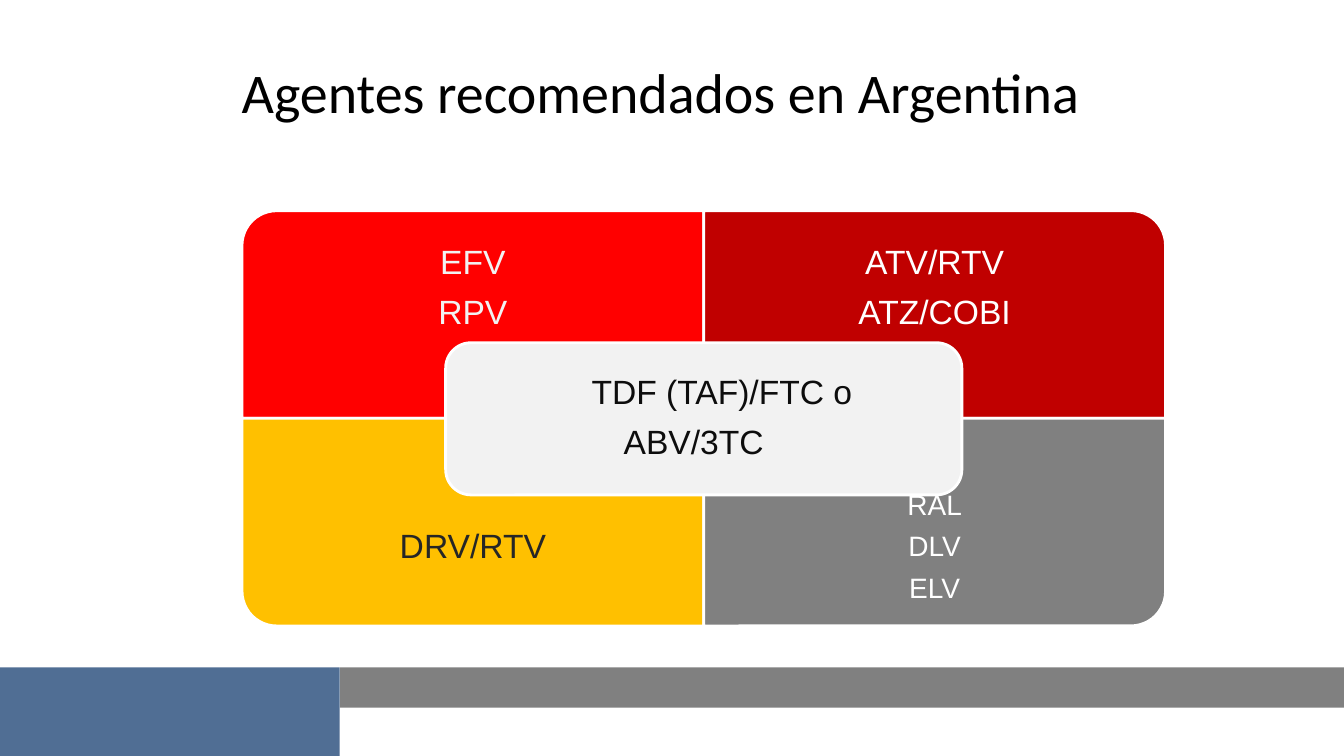
from pptx import Presentation
from pptx.dml.color import RGBColor
from pptx.enum.shapes import MSO_SHAPE
from pptx.enum.text import MSO_ANCHOR, PP_ALIGN
from pptx.util import Inches, Pt

RECTANGLE = MSO_SHAPE.RECTANGLE
ONE_ROUND_CORNER = MSO_SHAPE.ROUND_1_RECTANGLE
ROUNDED = MSO_SHAPE.ROUNDED_RECTANGLE
MIDDLE = MSO_ANCHOR.MIDDLE
CENTER = PP_ALIGN.CENTER

presentation = Presentation()
presentation.slide_width = Inches(13.33)
presentation.slide_height = Inches(7.5)
slide = presentation.slides.add_slide(presentation.slide_layouts[5])


def add_panel(kind, left, top, width, height, fill, outlined=True):
    shape = slide.shapes.add_shape(
        kind, Inches(left), Inches(top), Inches(width), Inches(height))
    shape.shadow.inherit = False
    shape.fill.solid()
    shape.fill.fore_color.rgb = RGBColor.from_string(fill)
    if outlined:
        shape.line.color.rgb = RGBColor.from_string("FFFFFF")
        shape.line.width = Pt(2)
    else:
        shape.line.fill.background()
    return shape


def add_label(left, top, width, height, inset, lines, size, color):
    box = slide.shapes.add_textbox(
        Inches(left), Inches(top), Inches(width), Inches(height))
    frame = box.text_frame
    frame.word_wrap = True
    frame.vertical_anchor = MIDDLE
    frame.margin_left = frame.margin_right = Inches(inset)
    frame.margin_top = frame.margin_bottom = Inches(inset)
    frame.text = "\n".join(lines)
    for paragraph in frame.paragraphs:
        paragraph.alignment = CENTER
        paragraph.line_spacing = 0.9
        paragraph.space_after = Pt(size * 0.4)
        for run in paragraph.runs:
            run.font.name = "Arial"
            run.font.size = Pt(size)
            run.font.color.rgb = RGBColor.from_string(color)
    return frame


title = slide.shapes.title
title.left, title.top = Inches(0.55), Inches(0.28)
title.width, title.height = Inches(12), Inches(1.25)
title.text_frame.text = "Agentes recomendados en Argentina"
title.text_frame.vertical_anchor = MIDDLE
title_paragraph = title.text_frame.paragraphs[0]
title_paragraph.alignment = CENTER
title_font = title_paragraph.runs[0].font
title_font.name = "Calibri"
title_font.size = Pt(40)
title_font.color.rgb = RGBColor.from_string("000000")

MATRIX_LEFT, MATRIX_TOP = 2.4, 2.09
CELL_WIDTH, CELL_HEIGHT, LABEL_HEIGHT = 4.58, 2.06, 1.55

# column, row, rotation, fill, text color, size, inset, drugs
quadrants = [
    (0, 0, 270, "FF0000", "F2F2F2", 24, 0.19, ["EFV", "RPV"]),
    (1, 0, 0, "C00000", "FFFFFF", 24, 0.19, ["ATV/RTV", "ATZ/COBI"]),
    (0, 1, 180, "FFC000", "262626", 24, 0.19, ["DRV/RTV"]),
    (1, 1, 90, "808080", "FFFFFF", 20, 0.16, ["RAL", "DLV", "ELV"]),
]
for column, row, rotation, fill, color, size, inset, drugs in quadrants:
    left = MATRIX_LEFT + column * CELL_WIDTH
    top = MATRIX_TOP + row * CELL_HEIGHT
    width, height = CELL_WIDTH, CELL_HEIGHT
    if rotation in (90, 270):
        width, height = height, width
    quadrant = add_panel(
        ONE_ROUND_CORNER, left + (CELL_WIDTH - width) / 2,
        top + (CELL_HEIGHT - height) / 2, width, height, fill)
    quadrant.rotation = rotation
    label_top = top + row * (CELL_HEIGHT - LABEL_HEIGHT)
    add_label(left, label_top, CELL_WIDTH, LABEL_HEIGHT, inset, drugs, size, color)

add_panel(ROUNDED, 4.42, 3.4, 5.12, 1.51, "F2F2F2")
backbone = add_label(4.49, 3.47, 4.97, 1.36, 0.1,
                     ["TDF (TAF)/FTC o", "ABV/3TC"], 24, "0D0D0D")
first_option, second_option = backbone.paragraphs
first_option._p.get_or_add_pPr().set("marL", str(Inches(0.37)))
second_option._p.get_or_add_pPr().set("marR", str(Inches(0.19)))

add_panel(RECTANGLE, 3.37, 6.62, 9.96, 0.4, "808080", outlined=False)
add_panel(RECTANGLE, 0, 6.62, 3.37, 0.88, "506E94", outlined=False)

presentation.save("out.pptx")
